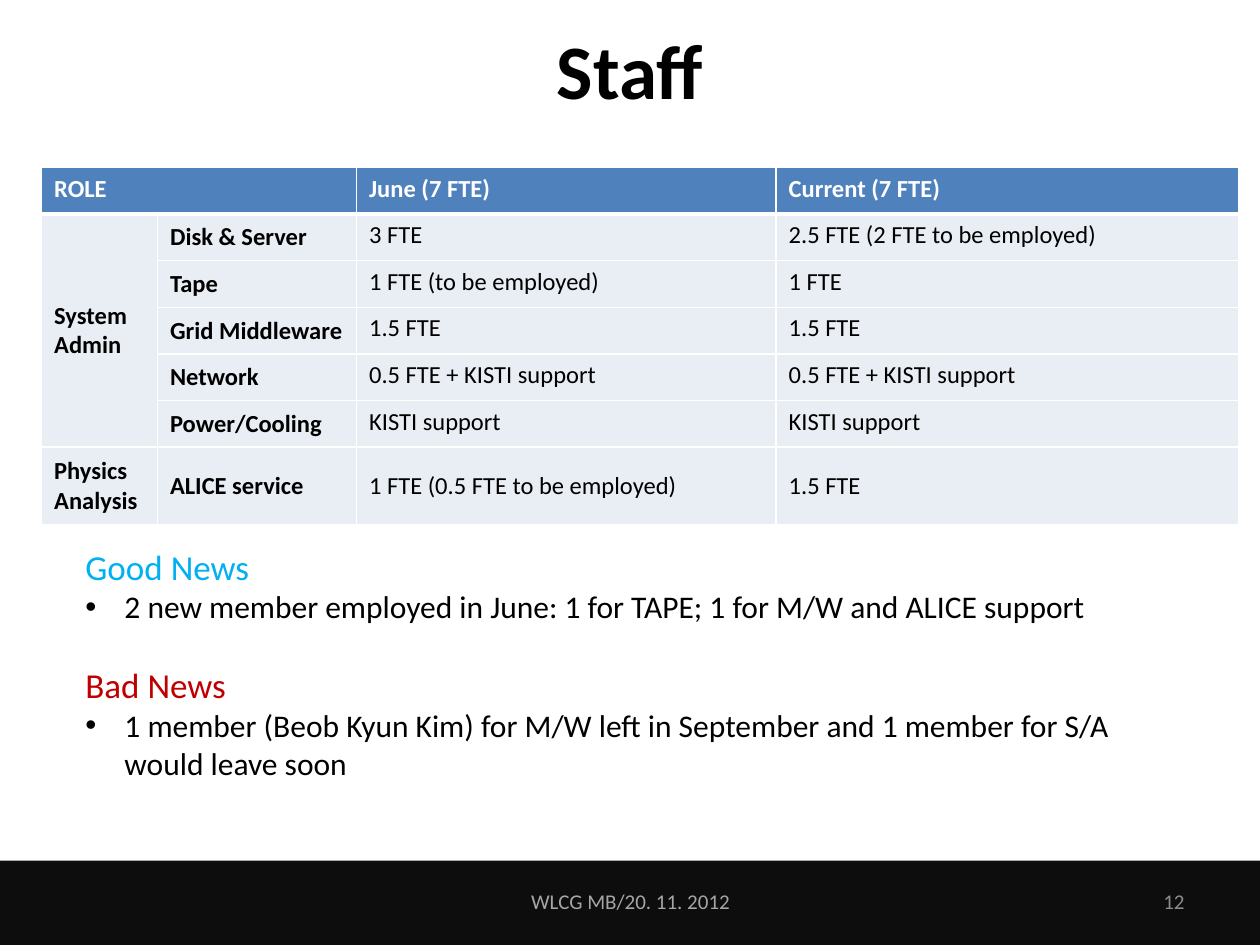
import dataclasses

import lxml.etree
import pptx
import pptx.dml.color
import pptx.enum.shapes
import pptx.enum.text
import pptx.oxml.ns
import pptx.util

Inches = pptx.util.Inches
Align = pptx.enum.text.PP_ALIGN
Anchor = pptx.enum.text.MSO_ANCHOR
qn = pptx.oxml.ns.qn


@dataclasses.dataclass(frozen=True)
class Theme:
    font: str = "Calibri"
    black: str = "000000"
    white: str = "FFFFFF"
    footer_bar: str = "0D0D0D"
    footer_text: str = "A6A6A6"
    page_number: str = "8C8C8C"
    header: str = "4F81BD"
    body: str = "E9EDF4"
    good: str = "00B0F0"
    bad: str = "C00000"
    title_size: int = 44
    heading_size: int = 20
    bullet_size: int = 18
    table_size: int = 14
    footer_size: int = 12


def rgb(value):
    return pptx.dml.color.RGBColor.from_string(value)


class StaffPage:
    def __init__(self, page, theme):
        self.page = page
        self.theme = theme

    def style(self, para, size, color, bold=False, align=Align.LEFT):
        para.alignment = align
        for span in para.runs:
            span.font.name = self.theme.font
            span.font.size = pptx.util.Pt(size)
            span.font.bold = bold
            span.font.color.rgb = rgb(color)

    def bar(self, left, top, width, height, color):
        box = self.page.shapes.add_shape(
            pptx.enum.shapes.MSO_SHAPE.RECTANGLE,
            Inches(left), Inches(top), Inches(width), Inches(height))
        box.shadow.inherit = False
        box.fill.solid()
        box.fill.fore_color.rgb = rgb(color)
        box.line.fill.background()

    def text_frame(self, left, top, width, height, anchor):
        box = self.page.shapes.add_textbox(
            Inches(left), Inches(top), Inches(width), Inches(height))
        frame = box.text_frame
        frame.word_wrap = True
        frame.vertical_anchor = anchor
        return frame

    def label(self, text, area, size, color, align, bold=False):
        frame = self.text_frame(*area, Anchor.MIDDLE)
        frame.text = text
        self.style(frame.paragraphs[0], size, color, bold, align)

    def news(self, sections, area):
        """Write coloured headings, each followed by one bullet."""
        frame = self.text_frame(*area, Anchor.TOP)
        para = frame.paragraphs[0]
        for index, (heading, color, item) in enumerate(sections):
            if index:
                para = frame.add_paragraph()
                para.space_before = pptx.util.Pt(22)
            para.text = heading
            self.style(para, self.theme.heading_size, color)
            para = frame.add_paragraph()
            para.text = item
            self.style(para, self.theme.bullet_size, self.theme.black)
            self.add_bullet(para)

    def add_bullet(self, para):
        properties = para._p.get_or_add_pPr()
        indent = Inches(0.31)
        properties.set("marL", str(indent))
        properties.set("indent", str(-indent))
        lxml.etree.SubElement(properties, qn("a:buFont"), typeface="Arial")
        lxml.etree.SubElement(properties, qn("a:buChar"), char="•")

    def add_borders(self, cell, top, bottom):
        properties = cell._tc.get_or_add_tcPr()
        sides = {"a:lnL": 1, "a:lnR": 1, "a:lnT": top, "a:lnB": bottom}
        for index, (side, points) in enumerate(sides.items()):
            line = lxml.etree.Element(qn(side), w=str(pptx.util.Pt(points)))
            fill = lxml.etree.SubElement(line, qn("a:solidFill"))
            lxml.etree.SubElement(fill, qn("a:srgbClr"), val=self.theme.white)
            properties.insert(index, line)

    def staff_table(self, rows, widths, heights, left, top):
        table = self.page.shapes.add_table(
            len(rows), len(widths), Inches(left), Inches(top),
            Inches(sum(widths)), Inches(sum(heights))).table
        for column, width in zip(table.columns, widths):
            column.width = Inches(width)
        for row, height in zip(table.rows, heights):
            row.height = Inches(height)
        last = len(rows) - 1
        for r, texts in enumerate(rows):
            for c, text in enumerate(texts):
                cell = table.cell(r, c)
                header = r == 0
                cell.text = text
                cell.fill.solid()
                cell.fill.fore_color.rgb = rgb(
                    self.theme.header if header else self.theme.body)
                middle = r == last or (c < 2 and not header)
                cell.vertical_anchor = Anchor.MIDDLE if middle else Anchor.TOP
                self.style(cell.text_frame.paragraphs[0], self.theme.table_size,
                           self.theme.white if header else self.theme.black,
                           bold=header or c < 2)
                self.add_borders(cell, 3 if r == 1 else 1, 3 if header else 1)
        table.cell(0, 0).merge(table.cell(0, 1))
        table.cell(1, 0).merge(table.cell(last - 1, 0))


ROWS = [
    ("ROLE", "", "June (7 FTE)", "Current (7 FTE)"),
    ("System Admin", "Disk & Server", "3 FTE", "2.5 FTE (2 FTE to be employed)"),
    ("", "Tape", "1 FTE (to be employed)", "1 FTE"),
    ("", "Grid Middleware", "1.5 FTE", "1.5 FTE"),
    ("", "Network", "0.5 FTE + KISTI support", "0.5 FTE + KISTI support"),
    ("", "Power/Cooling", "KISTI support", "KISTI support"),
    ("Physics Analysis", "ALICE service", "1 FTE (0.5 FTE to be employed)", "1.5 FTE"),
]


def main():
    theme = Theme()
    deck = pptx.Presentation()
    deck.slide_width = Inches(10)
    deck.slide_height = Inches(7.5)
    staff = StaffPage(deck.slides.add_slide(deck.slide_layouts[6]), theme)

    staff.bar(0, 6.83, 10, 0.67, theme.footer_bar)
    staff.label("Staff", (0.5, -0.08, 9, 1.25), theme.title_size, theme.black,
                Align.CENTER, bold=True)
    staff.label("WLCG MB/20. 11. 2012", (3.42, 6.95, 3.17, 0.4),
                theme.footer_size, theme.footer_text, Align.CENTER)
    staff.label("12", (7.17, 6.95, 2.33, 0.4),
                theme.footer_size, theme.page_number, Align.RIGHT)
    staff.staff_table(ROWS, widths=(0.92, 1.58, 3.33, 3.67),
                      heights=[0.37] * 6 + [0.62], left=0.33, top=1.33)
    staff.news([
        ("Good News", theme.good,
         "2 new member employed in June: 1 for TAPE; 1 for M/W and ALICE support"),
        ("Bad News", theme.bad,
         "1 member (Beob Kyun Kim) for M/W left in September and 1 member for S/A"
         " would leave soon"),
    ], (0.58, 4.28, 9, 2.29))
    deck.save("out.pptx")


if __name__ == "__main__":
    main()
